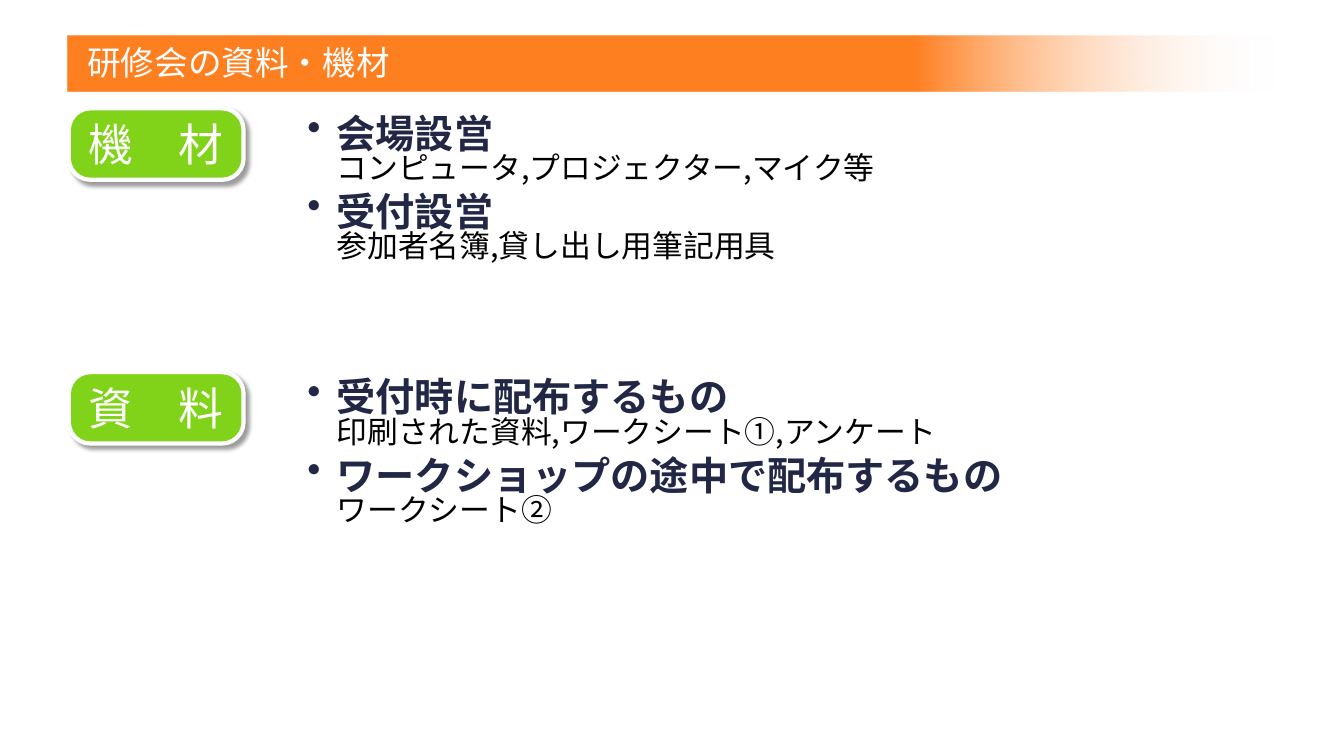
import dataclasses

import lxml.etree
import pptx
import pptx.dml.color
import pptx.enum.shapes
import pptx.enum.text
import pptx.oxml.ns
import pptx.util


@dataclasses.dataclass(frozen=True)
class Theme:
    font: str = "Noto Sans CJK JP"
    orange: str = "FF8021"
    green: str = "81D31A"
    navy: str = "212745"
    black: str = "000000"
    white: str = "FFFFFF"
    title_size: int = 24
    badge_size: int = 32
    heading_size: int = 28
    detail_size: int = 22


def rgb(color):
    return pptx.dml.color.RGBColor.from_string(color)


def add_element(parent, tag, **attributes):
    values = {name: str(value) for name, value in attributes.items()}
    return lxml.etree.SubElement(parent, pptx.oxml.ns.qn(tag), values)


class SlideBuilder:
    """Places elements on a grid of 160 columns by 90 rows."""

    def __init__(self, presentation, theme):
        self.theme = theme
        self.column = presentation.slide_width / 160
        self.row = presentation.slide_height / 90
        self.slide = presentation.slides.add_slide(presentation.slide_layouts[6])

    def place(self, left, top, width, height):
        return (round(left * self.column), round(top * self.row),
                round(width * self.column), round(height * self.row))

    def add_shape(self, kind, *box):
        shape = self.slide.shapes.add_shape(kind, *self.place(*box))
        shape.shadow.inherit = False
        return shape

    def set_frame(self, shape, anchor, left=0, top=0, bottom=0):
        frame = shape.text_frame
        frame.word_wrap = True
        frame.vertical_anchor = anchor
        frame.margin_left = pptx.util.Inches(left)
        frame.margin_top = pptx.util.Inches(top)
        frame.margin_right = 0
        frame.margin_bottom = pptx.util.Inches(bottom)
        return frame

    def format_run(self, run, size, color, bold=False):
        run.font.size = pptx.util.Pt(size)
        run.font.bold = bold
        run.font.color.rgb = rgb(color)
        run.font.name = self.theme.font
        add_element(run.font._element, "a:ea", typeface=self.theme.font)

    def set_label(self, frame, text, size, alignment):
        frame.text = text
        paragraph = frame.paragraphs[0]
        paragraph.alignment = alignment
        self.format_run(paragraph.runs[0], size, self.theme.white)

    def title_bar(self, text, *box):
        shape = self.add_shape(pptx.enum.shapes.MSO_SHAPE.RECTANGLE, *box)
        shape.line.fill.background()
        # Solid orange, fading out over the last 30 percent
        shape.fill.gradient()
        shape.fill.gradient_angle = 0
        start, end = shape.fill.gradient_stops
        start.position, end.position = 0.7, 1
        start.color.rgb = rgb(self.theme.orange)
        end.color.rgb = rgb(self.theme.white)
        end_color = end._gs.find(pptx.oxml.ns.qn("a:srgbClr"))
        add_element(end_color, "a:alpha", val=0)
        frame = self.set_frame(shape, pptx.enum.text.MSO_ANCHOR.MIDDLE,
                               left=0.2, bottom=0.04)
        self.set_label(frame, text, self.theme.title_size,
                       pptx.enum.text.PP_ALIGN.LEFT)

    def badge(self, text, *box):
        shape = self.add_shape(pptx.enum.shapes.MSO_SHAPE.ROUNDED_RECTANGLE, *box)
        shape.adjustments[0] = 0.3
        shape.fill.solid()
        shape.fill.fore_color.rgb = rgb(self.theme.green)
        shape.line.color.rgb = rgb(self.theme.white)
        shape.line.width = pptx.util.Pt(3)
        # Soft shadow to the lower right
        effects = shape._element.spPr.find(pptx.oxml.ns.qn("a:effectLst"))
        shadow = add_element(effects, "a:outerShdw", blurRad=pptx.util.Pt(3.1),
                             dist=pptx.util.Pt(4), dir=45 * 60000,
                             algn="tl", rotWithShape=0)
        color = add_element(shadow, "a:srgbClr", val=self.theme.black)
        add_element(color, "a:alpha", val=38000)
        frame = self.set_frame(shape, pptx.enum.text.MSO_ANCHOR.MIDDLE)
        self.set_label(frame, text, self.theme.badge_size,
                       pptx.enum.text.PP_ALIGN.CENTER)

    def bullet_list(self, items, *box):
        shape = self.slide.shapes.add_textbox(*self.place(*box))
        frame = self.set_frame(shape, pptx.enum.text.MSO_ANCHOR.TOP, top=0.03)
        frame.text = "\n".join(f"{heading}\v{detail}" for heading, detail in items)
        indent = pptx.util.Inches(0.69)
        for index, paragraph in enumerate(frame.paragraphs):
            paragraph.level = 1
            properties = paragraph._p.get_or_add_pPr()
            properties.set("marL", str(indent))
            properties.set("indent", str(pptx.util.Inches(-0.29)))
            add_element(properties, "a:buChar", char="•")
            tabs = add_element(properties, "a:tabLst")
            add_element(tabs, "a:tab", pos=indent, algn="l")
            paragraph.line_spacing = 0.8
            paragraph.space_before = pptx.util.Pt(8 if index else 0)
            heading, detail = paragraph.runs
            self.format_run(heading, self.theme.heading_size, self.theme.navy, True)
            self.format_run(detail, self.theme.detail_size, self.theme.black)


SECTIONS = [
    ("機　材", [
        ("会場設営", "コンピュータ,プロジェクター,マイク等"),
        ("受付設営", "参加者名簿,貸し出し用筆記用具"),
    ]),
    ("資　料", [
        ("受付時に配布するもの", "印刷された資料,ワークシート①,アンケート"),
        ("ワークショップの途中で配布するもの", "ワークシート②"),
    ]),
]


def main():
    presentation = pptx.Presentation()
    presentation.slide_width = pptx.util.Inches(13.33)
    presentation.slide_height = pptx.util.Inches(7.5)
    builder = SlideBuilder(presentation, Theme())

    # Heading
    builder.title_bar("研修会の資料・機材", 8, 4.3, 144, 6.6)

    # One badge and one list per section
    for index, (label, items) in enumerate(SECTIONS):
        offset = index * 31.4
        builder.bullet_list(items, 31.8, 13.7 + offset, 118.3, 22.8)
        builder.badge(label, 8.2, 12.9 + offset, 20.8, 8.5)

    presentation.save("out.pptx")


if __name__ == "__main__":
    main()
